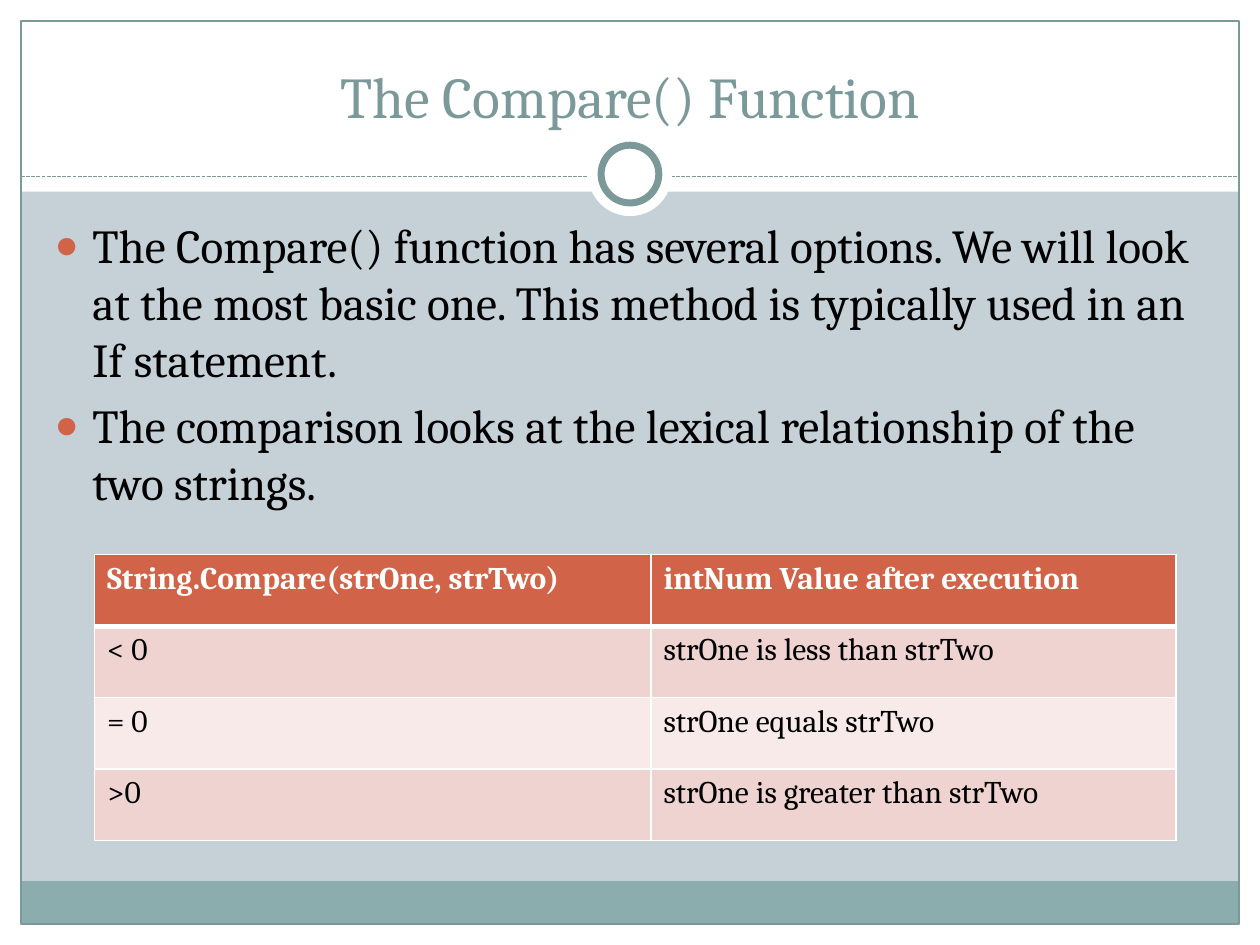
from dataclasses import dataclass

from lxml.etree import SubElement
from pptx import Presentation
from pptx.dml.color import RGBColor
from pptx.enum.dml import MSO_LINE
from pptx.enum.shapes import MSO_CONNECTOR, MSO_SHAPE
from pptx.enum.text import MSO_ANCHOR, MSO_AUTO_SIZE, PP_ALIGN
from pptx.oxml import parse_xml
from pptx.oxml.ns import nsdecls, qn
from pptx.util import Pt


@dataclass(frozen=True)
class Theme:
    font: str = "Cambria"
    title_size: int = 33
    body_size: int = 27
    table_size: int = 18
    white: str = "FFFFFF"
    black: str = "000000"
    background: str = "C5D1D7"
    footer: str = "8CADAE"
    outline: str = "7C999A"
    accent: str = "D16349"
    odd_row: str = "EED3D0"
    even_row: str = "F7EAE9"


THEME = Theme()
WIDTH, HEIGHT, MARGIN = 720, 540, 12
CIRCLE_X, CIRCLE_Y = WIDTH / 2, 99.5

BULLETS = [
    "The Compare() function has several options. We will look at the most basic one. "
    "This method is typically used in an If statement.",
    "The comparison looks at the lexical relationship of the two strings.",
]
ROWS = [
    ("String.Compare(strOne, strTwo)", "intNum Value after execution"),
    ("< 0", "strOne is less than strTwo"),
    ("= 0", "strOne equals strTwo"),
    (">0", "strOne is greater than strTwo"),
]


def color(value):
    return RGBColor.from_string(value)


def write(para, text, size, ink=THEME.black, bold=False, align=PP_ALIGN.LEFT):
    para.alignment = align
    span = para.add_run()
    span.text = text
    span.font.name = THEME.font
    span.font.size = Pt(size)
    span.font.bold = bold
    span.font.color.rgb = color(ink)


def add_box(page, left, top, width, height, fill=None, line=None, weight=0.75,
            kind=MSO_SHAPE.RECTANGLE):
    box = page.shapes.add_shape(kind, Pt(left), Pt(top), Pt(width), Pt(height))
    box.shadow.inherit = False
    if fill:
        box.fill.solid()
        box.fill.fore_color.rgb = color(fill)
    else:
        box.fill.background()
    if line:
        box.line.color.rgb = color(line)
        box.line.width = Pt(weight)
    else:
        box.line.fill.background()


def add_circle(page, diameter, **style):
    add_box(page, CIRCLE_X - diameter / 2, CIRCLE_Y - diameter / 2, diameter, diameter,
            fill=THEME.white, kind=MSO_SHAPE.OVAL, **style)


def add_divider(page, top):
    line = page.shapes.add_connector(
        MSO_CONNECTOR.STRAIGHT, Pt(MARGIN), Pt(top), Pt(WIDTH - MARGIN), Pt(top))
    line.line.color.rgb = color(THEME.outline)
    line.line.width = Pt(0.75)
    line.line.dash_style = MSO_LINE.SQUARE_DOT
    SubElement(line.element.spPr, qn("a:effectLst"))


def add_decoration(page):
    inner_width = WIDTH - 2 * MARGIN
    # White margins and title band
    add_box(page, 0, HEIGHT - MARGIN, WIDTH, MARGIN, fill=THEME.white)
    add_box(page, 0, 0, WIDTH, 109.5, fill=THEME.white)
    for left in (0, WIDTH - MARGIN):
        add_box(page, left, 0, MARGIN, HEIGHT, fill=THEME.white)
    # Footer band and frame
    add_box(page, MARGIN, 503.5, inner_width, 24.5, fill=THEME.footer)
    add_box(page, MARGIN, MARGIN, inner_width, HEIGHT - 2 * MARGIN, line=THEME.outline)
    # Divider with ring
    add_divider(page, 100.8)
    add_circle(page, 48)
    add_circle(page, 33, line=THEME.outline, weight=4)


def place(page, holder, left, top, width, height, anchor):
    """Position a placeholder and bring it in front of the decoration."""
    holder.left, holder.top, holder.width, holder.height = map(Pt, (left, top, width, height))
    frame = holder.text_frame
    frame.word_wrap = True
    frame.auto_size = MSO_AUTO_SIZE.NONE
    frame.vertical_anchor = anchor
    page.shapes.element.append(holder.element)
    return frame


def add_title(page, text):
    frame = place(page, page.shapes.title, 24, 18, 672, 60, MSO_ANCHOR.BOTTOM)
    write(frame.paragraphs[0], text, THEME.title_size, ink=THEME.outline,
          align=PP_ALIGN.CENTER)


def set_bullet(para):
    properties = para._p.get_or_add_pPr()
    properties.set("marL", str(Pt(21.6)))
    properties.set("indent", str(-Pt(21.6)))
    bullet_color = SubElement(properties, qn("a:buClr"))
    SubElement(bullet_color, qn("a:srgbClr"), val=THEME.accent)
    SubElement(properties, qn("a:buSzPct"), val="85000")
    SubElement(properties, qn("a:buChar"), char="●")


def add_bullets(page, items):
    frame = place(page, page.placeholders[1], 24, 120, 670, 360, MSO_ANCHOR.TOP)
    for index, text in enumerate(items):
        para = frame.add_paragraph() if index else frame.paragraphs[0]
        write(para, text, THEME.body_size)
        para.space_before = Pt(0.2 * THEME.body_size)
        set_bullet(para)


def set_borders(cell, top=1, bottom=1):
    properties = cell._tc.get_or_add_tcPr()
    sides = {"lnL": 1, "lnR": 1, "lnT": top, "lnB": bottom}
    for position, (side, weight) in enumerate(sides.items()):
        border = parse_xml(
            f'<a:{side} {nsdecls("a")} w="{Pt(weight)}"><a:solidFill>'
            f'<a:srgbClr val="{THEME.white}"/></a:solidFill></a:{side}>')
        properties.insert(position, border)


def add_comparison_table(page, rows):
    column_widths, row_height = (318, 300), 40.85
    table = page.shapes.add_table(
        len(rows), len(column_widths), Pt(54), Pt(317), Pt(sum(column_widths)),
        Pt(row_height * len(rows))).table
    for column, width in zip(table.columns, column_widths):
        column.width = Pt(width)
    for row_index, texts in enumerate(rows):
        header = row_index == 0
        fill = THEME.accent if header else (THEME.even_row, THEME.odd_row)[row_index % 2]
        for column_index, text in enumerate(texts):
            cell = table.cell(row_index, column_index)
            cell.fill.solid()
            cell.fill.fore_color.rgb = color(fill)
            write(cell.text_frame.paragraphs[0], text, THEME.table_size, bold=header,
                  ink=THEME.white if header else THEME.black)
            set_borders(cell, top=3 if row_index == 1 else 1, bottom=3 if header else 1)


def main():
    deck = Presentation()
    deck.slide_width, deck.slide_height = Pt(WIDTH), Pt(HEIGHT)
    page = deck.slides.add_slide(deck.slide_layouts[1])
    page.background.fill.solid()
    page.background.fill.fore_color.rgb = color(THEME.background)
    add_decoration(page)
    add_title(page, "The Compare() Function")
    add_bullets(page, BULLETS)
    add_comparison_table(page, ROWS)
    deck.save("out.pptx")


if __name__ == "__main__":
    main()
